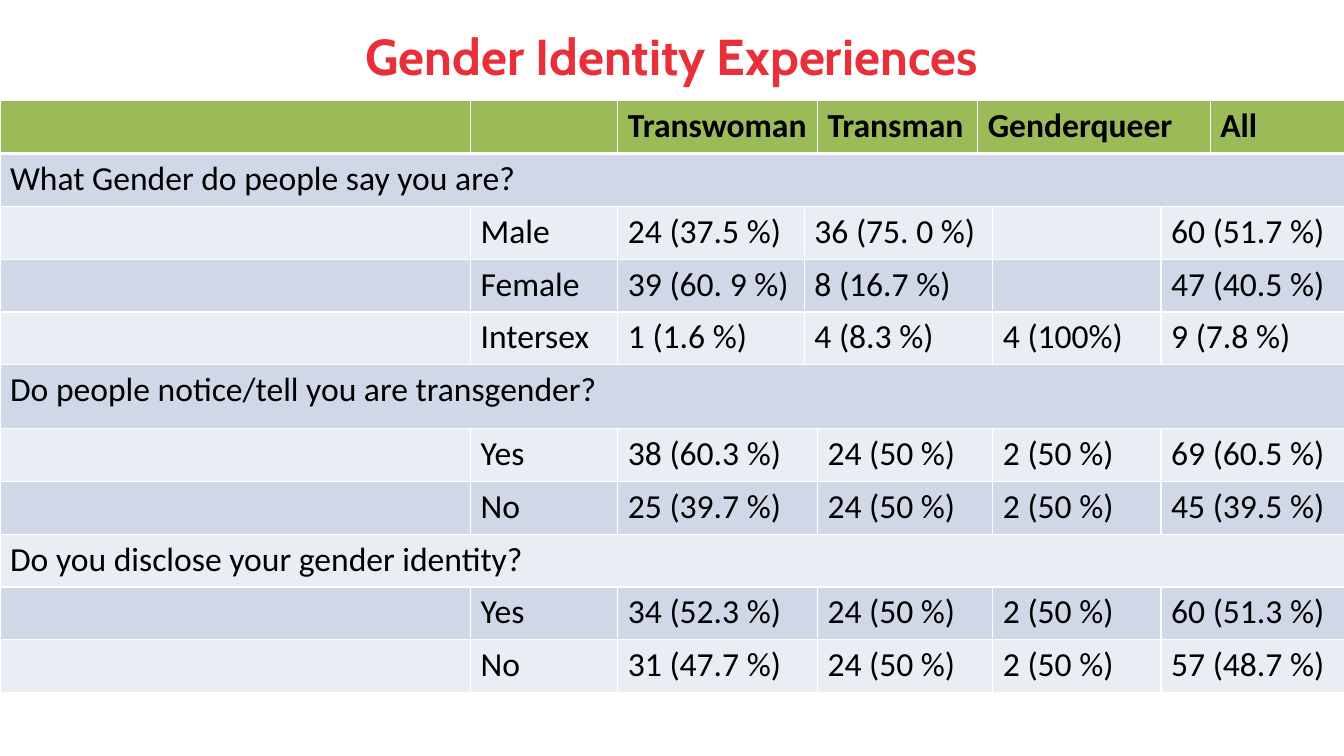
from dataclasses import dataclass

from lxml.etree import SubElement
from pptx import Presentation
from pptx.dml.color import RGBColor
from pptx.enum.text import MSO_ANCHOR, PP_ALIGN
from pptx.oxml.ns import qn
from pptx.util import Cm, Pt


@dataclass(frozen=True)
class Theme:
    title_font: str = "Cabin"
    body_font: str = "Calibri"
    title_size: int = 36
    body_size: int = 24
    title: str = "E8303B"
    text: str = "000000"
    header: str = "9BBB59"
    bands: tuple = ("E9EDF4", "D0D8E8")
    border: str = "FFFFFF"
    border_width: int = 1
    header_rule: int = 3


THEME = Theme()

COLUMN_WIDTHS = (11.86, 3.71, 4.7, 0.33, 4.04, 0.38, 4.24, 1.24, 3.45)
ROW_HEIGHT = 1.33
TALL_ROW, TALL_HEIGHT = 5, 1.61

HEADER_SPANS = (1, 1, 2, 1, 3, 1)
QUESTION_SPANS = (9,)
PERCEIVED_SPANS = (1, 1, 1, 3, 1, 2)
ANSWER_SPANS = (1, 1, 2, 2, 1, 2)

ROWS = (
    (HEADER_SPANS, ("", "", "Transwoman", "Transman", "Genderqueer", "All")),
    (QUESTION_SPANS, ("What Gender do people say you are?",)),
    (PERCEIVED_SPANS, ("", "Male", "24 (37.5 %)", "36 (75. 0 %)", "", "60 (51.7 %)")),
    (PERCEIVED_SPANS, ("", "Female", "39 (60. 9 %)", "8 (16.7 %)", "", "47 (40.5 %)")),
    (PERCEIVED_SPANS, ("", "Intersex", "1 (1.6 %)", "4 (8.3 %)", "4 (100%)", "9 (7.8 %)")),
    (QUESTION_SPANS, ("Do people notice/tell you are transgender?",)),
    (ANSWER_SPANS, ("", "Yes", "38 (60.3 %)", "24 (50 %)", "2 (50 %)", "69 (60.5 %)")),
    (ANSWER_SPANS, ("", "No", "25 (39.7 %)", "24 (50 %)", "2 (50 %)", "45 (39.5 %)")),
    (QUESTION_SPANS, ("Do you disclose your gender identity?",)),
    (ANSWER_SPANS, ("", "Yes", "34 (52.3 %)", "24 (50 %)", "2 (50 %)", "60 (51.3 %)")),
    (ANSWER_SPANS, ("", "No", "31 (47.7 %)", "24 (50 %)", "2 (50 %)", "57 (48.7 %)")),
)


def set_font(paragraph, name, size, color, bold):
    font = paragraph.font
    font.name, font.size, font.bold = name, Pt(size), bold
    font.color.rgb = RGBColor.from_string(color)


def set_borders(cell, row):
    properties = cell._tc.get_or_add_tcPr()
    top = THEME.header_rule if row == 1 else THEME.border_width
    bottom = THEME.header_rule if row == 0 else THEME.border_width
    widths = {"L": THEME.border_width, "R": THEME.border_width, "T": top, "B": bottom}
    for side, width in widths.items():
        line = SubElement(properties, qn(f"a:ln{side}"), w=str(Pt(width)))
        fill = SubElement(line, qn("a:solidFill"))
        SubElement(fill, qn("a:srgbClr"), val=THEME.border)


def add_title(slide, left, top, width, height):
    title = slide.shapes.add_textbox(left, top, width, height)
    frame = title.text_frame
    frame.word_wrap = True
    frame.vertical_anchor = MSO_ANCHOR.MIDDLE
    paragraph = frame.paragraphs[0]
    paragraph.text = "Gender Identity Experiences"
    paragraph.alignment = PP_ALIGN.CENTER
    set_font(paragraph, THEME.title_font, THEME.title_size, THEME.title, True)


def add_experiences(slide, left, top, width, height):
    experiences = slide.shapes.add_table(
        len(ROWS), len(COLUMN_WIDTHS), left, top, width, height
    ).table
    for column, column_width in zip(experiences.columns, COLUMN_WIDTHS):
        column.width = Cm(column_width)
    for row, (spans, answers) in enumerate(ROWS):
        experiences.rows[row].height = Cm(TALL_HEIGHT if row == TALL_ROW else ROW_HEIGHT)
        band = THEME.bands[row % 2] if row else THEME.header
        for cell in experiences.rows[row].cells:
            set_borders(cell, row)
            cell.fill.solid()
            cell.fill.fore_color.rgb = RGBColor.from_string(band)
        start = 0
        for span, answer in zip(spans, answers):
            cell = experiences.cell(row, start)
            if span > 1:
                cell.merge(experiences.cell(row, start + span - 1))
            paragraph = cell.text_frame.paragraphs[0]
            paragraph.text = answer
            set_font(paragraph, THEME.body_font, THEME.body_size, THEME.text, row == 0)
            start += span


def main():
    deck = Presentation()
    deck.slide_width, deck.slide_height = Cm(33.87), Cm(19.05)
    slide = deck.slides.add_slide(deck.slide_layouts[6])
    add_title(slide, Cm(2.08), Cm(0.76), Cm(29.7), Cm(1.25))
    table_height = ROW_HEIGHT * (len(ROWS) - 1) + TALL_HEIGHT
    add_experiences(slide, Cm(0), Cm(2.54), Cm(sum(COLUMN_WIDTHS)), Cm(table_height))
    deck.save("out.pptx")


if __name__ == "__main__":
    main()
